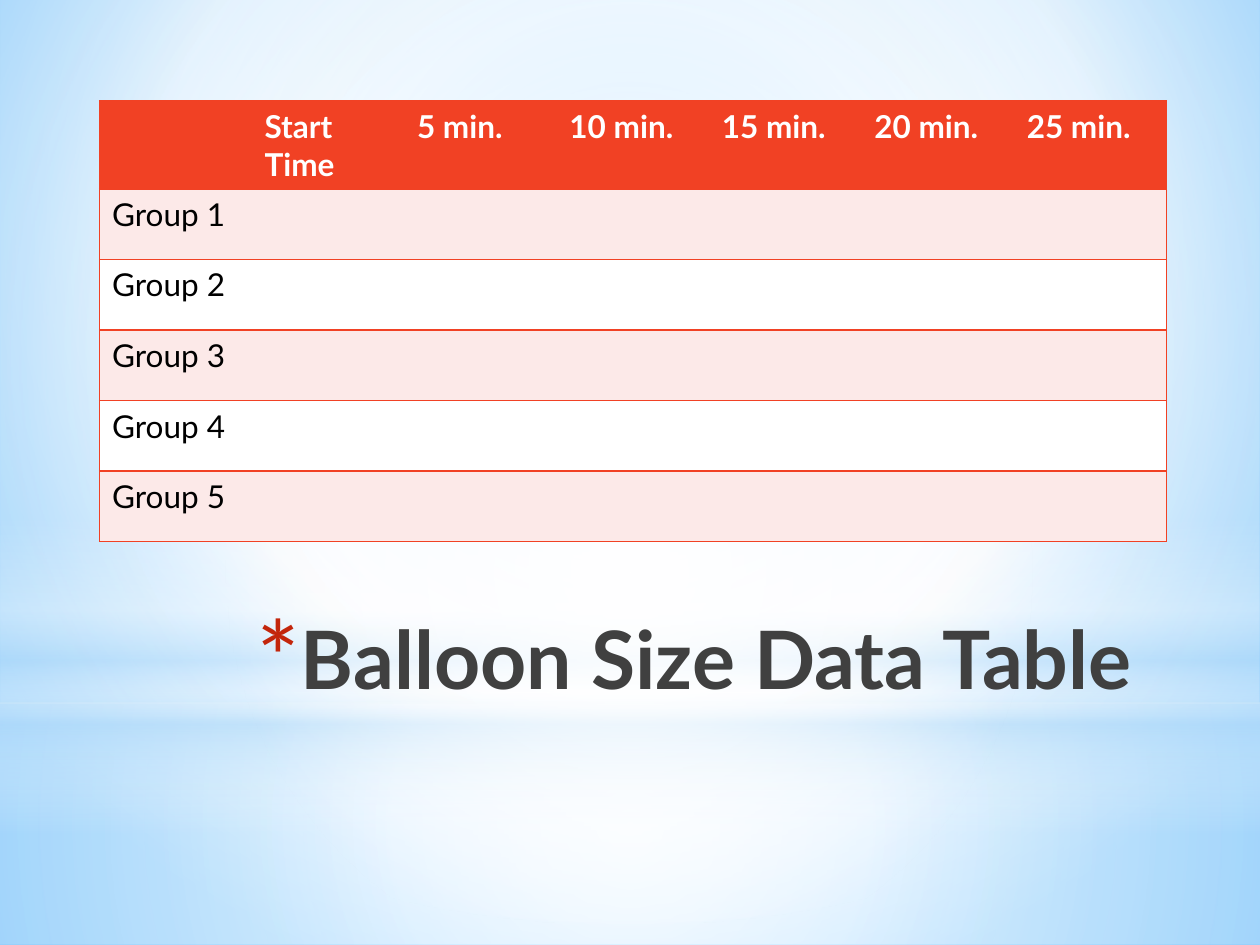
from lxml.etree import SubElement
from pptx import Presentation
from pptx.dml.color import RGBColor
from pptx.enum.shapes import MSO_SHAPE
from pptx.enum.text import MSO_ANCHOR, MSO_AUTO_SIZE, PP_ALIGN
from pptx.oxml import parse_xml
from pptx.oxml.ns import nsdecls, qn
from pptx.util import Inches, Pt

WHITE = RGBColor(0xFF, 0xFF, 0xFF)
BLACK = RGBColor(0x00, 0x00, 0x00)
CHARCOAL = RGBColor(0x40, 0x40, 0x40)
ORANGE = RGBColor(0xF1, 0x41, 0x24)
PINK = RGBColor(0xFC, 0xE9, 0xE8)
BULLET_RED = RGBColor(0xC3, 0x26, 0x0C)
PALE_BLUE = RGBColor(0xB4, 0xDC, 0xFA)
SKY_BLUE = RGBColor(0x9E, 0xD5, 0xFF)
DEEP_BLUE = RGBColor(0x5B, 0xB9, 0xFF)

TIMES = ["Start Time", "5 min.", "10 min.", "15 min.", "20 min.", "25 min."]
GROUPS = [f"Group {number}" for number in range(1, 6)]
CENTER = (50, 50, 50, 50)


def write_text(frame, text, size=18, color=BLACK, bold=False, align=PP_ALIGN.LEFT):
    para = frame.paragraphs[0]
    para.alignment = align
    span = para.add_run()
    span.text = text
    span.font.name = "Lato"
    span.font.size = Pt(size)
    span.font.bold = bold
    span.font.color.rgb = color
    return para


def gradient(stops, focus=None):
    stop_xml = "".join(
        f'<a:gs pos="{position * 1000}"><a:srgbClr val="{color}">'
        f'<a:alpha val="{opacity * 1000}"/></a:srgbClr></a:gs>'
        for position, color, opacity in stops
    )
    if focus:
        left, top, right, bottom = (value * 1000 for value in focus)
        direction = (
            f'<a:path path="circle"><a:fillToRect l="{left}" t="{top}" '
            f'r="{right}" b="{bottom}"/></a:path>'
        )
    else:
        direction = '<a:lin ang="5400000" scaled="0"/>'
    return parse_xml(
        f'<a:gradFill {nsdecls("a")} rotWithShape="1">'
        f"<a:gsLst>{stop_xml}</a:gsLst>{direction}</a:gradFill>"
    )


class SlideBuilder:
    def __init__(self, slide):
        self.slide = slide

    def background(self, stops, focus):
        self.slide.background.fill.solid()
        properties = self.slide._element.xpath(".//p:bgPr")[0]
        properties.replace(properties.find(qn("a:solidFill")), gradient(stops, focus))

    def glow(self, kind, top, height, stops, focus=None):
        shape = self.slide.shapes.add_shape(
            kind, Inches(0), Inches(top), Inches(10), Inches(height)
        )
        shape.shadow.inherit = False
        shape.line.fill.background()
        shape.fill.solid()
        properties = shape._element.spPr
        properties.replace(properties.find(qn("a:solidFill")), gradient(stops, focus))

    def title(self, text, left, top, width, height):
        box = self.slide.shapes.title
        self.slide.shapes._spTree.append(box._element)
        box.left, box.top = Inches(left), Inches(top)
        box.width, box.height = Inches(width), Inches(height)
        frame = box.text_frame
        frame.word_wrap = True
        frame.auto_size = MSO_AUTO_SIZE.NONE
        frame.vertical_anchor = MSO_ANCHOR.TOP
        para = write_text(frame, text, 46, CHARCOAL, True, PP_ALIGN.RIGHT)
        properties = para._p.get_or_add_pPr()
        properties.set("marL", str(Inches(0.35)))
        properties.set("indent", str(Inches(-0.35)))
        bullet_color = SubElement(properties, qn("a:buClr"))
        SubElement(bullet_color, qn("a:srgbClr"), val=str(BULLET_RED))
        SubElement(properties, qn("a:buSzPct"), val="128000")
        SubElement(properties, qn("a:buFont"), typeface="Lato")
        SubElement(properties, qn("a:buChar"), char="*")

    def borders(self, cell, sides):
        properties = cell._tc.get_or_add_tcPr()
        for index, side in enumerate("LRTB"):
            paint = (
                f'<a:solidFill><a:srgbClr val="{ORANGE}"/></a:solidFill>'
                if side in sides
                else "<a:noFill/>"
            )
            line = f'<a:ln{side} {nsdecls("a")} w="{Pt(1)}">{paint}</a:ln{side}>'
            properties.insert(index, parse_xml(line))

    def table(self, rows, left, top, column_width, row_height):
        column_count = len(rows[0])
        table = self.slide.shapes.add_table(
            len(rows), column_count, Inches(left), Inches(top),
            Inches(column_width * column_count), Inches(row_height * len(rows)),
        ).table
        for column in table.columns:
            column.width = Inches(column_width)
        for row_index, values in enumerate(rows):
            table.rows[row_index].height = Inches(row_height)
            header = row_index == 0
            fill = ORANGE if header else PINK if row_index % 2 else WHITE
            for column_index, value in enumerate(values):
                cell = table.cell(row_index, column_index)
                cell.fill.solid()
                cell.fill.fore_color.rgb = fill
                sides = "TB"
                if column_index == 0:
                    sides += "L"
                if column_index == column_count - 1:
                    sides += "R"
                self.borders(cell, sides)
                if value:
                    write_text(
                        cell.text_frame, value,
                        color=WHITE if header else BLACK, bold=header,
                    )


def main():
    deck = Presentation()
    deck.slide_width, deck.slide_height = Inches(10), Inches(7.5)
    page = SlideBuilder(deck.slides.add_slide(deck.slide_layouts[5]))
    page.background(
        [(0, SKY_BLUE, 100), (60, WHITE, 100), (100, DEEP_BLUE, 100)],
        (20, 10, 20, 60),
    )
    page.glow(
        MSO_SHAPE.RECTANGLE, 5.58, 1.92,
        [(0, WHITE, 91), (37, WHITE, 76), (100, PALE_BLUE, 79)], CENTER,
    )
    page.glow(
        MSO_SHAPE.RECTANGLE, 0, 5.58,
        [(0, WHITE, 89), (48, WHITE, 62), (100, PALE_BLUE, 79)], CENTER,
    )
    page.glow(
        MSO_SHAPE.RECTANGLE, 4.12, 2.5,
        [(0, WHITE, 0), (29, WHITE, 30), (45, PALE_BLUE, 40),
         (55, WHITE, 26), (65, PALE_BLUE, 60), (100, WHITE, 0)],
    )
    page.glow(
        MSO_SHAPE.OVAL, 1.75, 5.58, [(0, WHITE, 100), (56, WHITE, 0)], CENTER
    )
    page.title("Balloon Size Data Table", 1.04, 4.78, 8.04, 1.25)
    rows = [["", *TIMES]] + [[group] + [""] * len(TIMES) for group in GROUPS]
    page.table(rows, 0.79, 0.8, 1.21, 0.56)
    deck.save("out.pptx")


if __name__ == "__main__":
    main()
